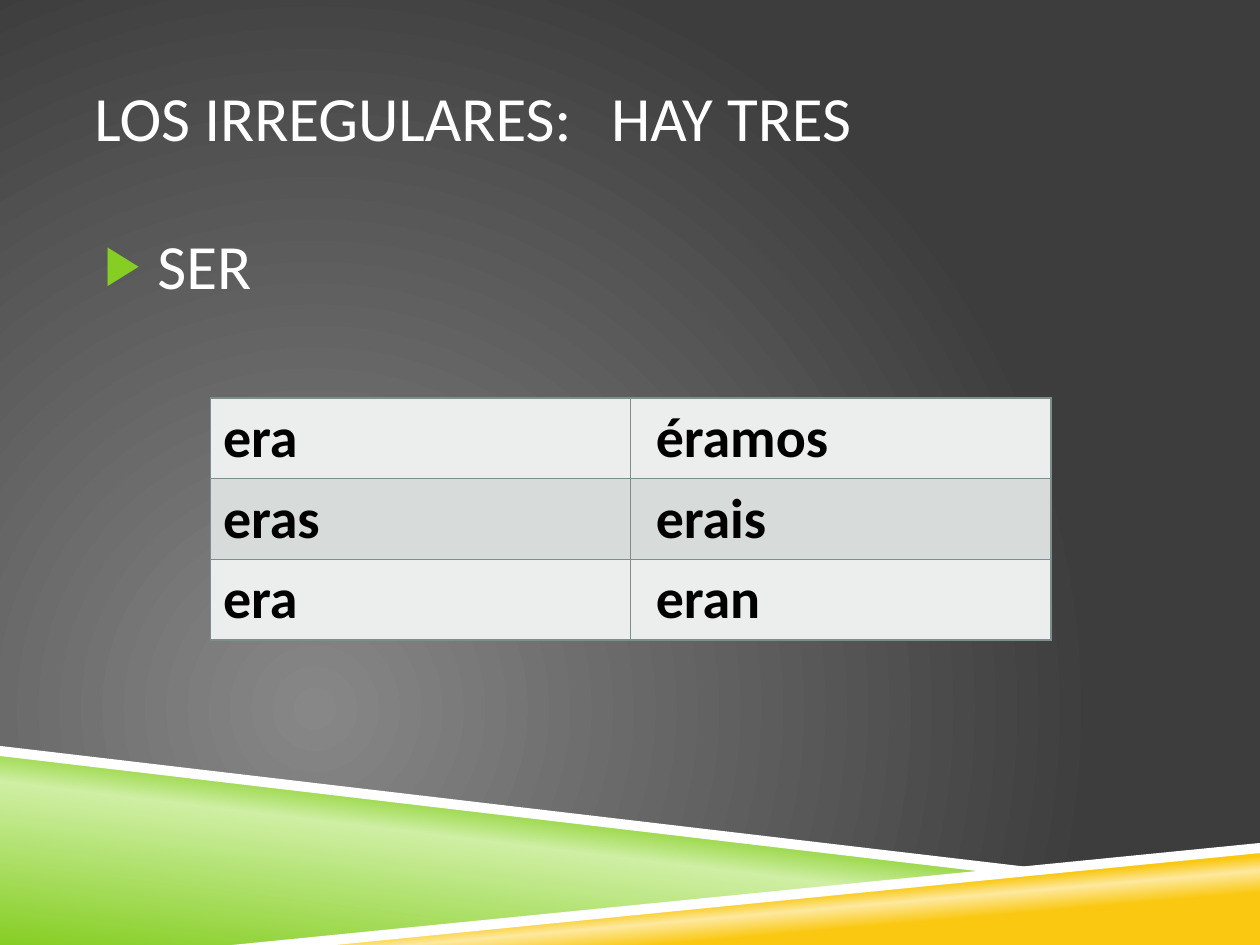
from lxml.etree import SubElement
from pptx import Presentation
from pptx.dml.color import RGBColor
from pptx.enum.text import MSO_ANCHOR
from pptx.oxml import parse_xml
from pptx.oxml.ns import nsdecls, qn
from pptx.util import Inches, Pt

WHITE = RGBColor(0xFF, 0xFF, 0xFF)
BLACK = RGBColor(0x00, 0x00, 0x00)
GREEN = RGBColor(0x86, 0xCE, 0x24)
PALE_GREEN = RGBColor(0xCF, 0xEF, 0xA4)
YELLOW = RGBColor(0xFA, 0xC8, 0x10)
PALE_YELLOW = RGBColor(0xFD, 0xE9, 0x9F)
MID_GREY = RGBColor(0x87, 0x87, 0x87)
DARK_GREY = RGBColor(0x3D, 0x3D, 0x3D)
BORDER = RGBColor(0x7D, 0x8F, 0x8C)
ROW_FILLS = [RGBColor(0xEC, 0xEE, 0xEE), RGBColor(0xD7, 0xDB, 0xDA)]
FONT = "Calibri"

FORMS = [("era", "éramos"), ("eras", "erais"), ("era", "eran")]


def gradient_xml(stops, direction):
    marks = "".join(
        f'<a:gs pos="{position * 1000}"><a:srgbClr val="{color}"/></a:gs>'
        for position, color in stops
    )
    return (
        f'<a:gradFill {nsdecls("a")} rotWithShape="1">'
        f"<a:gsLst>{marks}</a:gsLst>{direction}</a:gradFill>"
    )


def set_background(page):
    direction = (
        '<a:path path="circle"><a:fillToRect l="50000" t="100000" '
        'r="100000" b="50000"/></a:path>'
    )
    fill = gradient_xml([(0, MID_GREY), (100, DARK_GREY)], direction)
    background = parse_xml(
        f'<p:bg {nsdecls("p", "a")}><p:bgPr>{fill}<a:effectLst/></p:bgPr></p:bg>'
    )
    page.element.cSld.insert(0, background)


def add_polygon(page, points):
    corners = [(Inches(x), Inches(y)) for x, y in points]
    builder = page.shapes.build_freeform(*corners[0])
    builder.add_line_segments(corners[1:], close=True)
    shape = builder.convert_to_shape()
    shape.shadow.inherit = False
    shape.line.fill.background()
    return shape


def add_gradient_polygon(page, points, stops, angle):
    shape = add_polygon(page, points)
    direction = f'<a:lin ang="{angle * 60000}" scaled="0"/>'
    geometry = shape.element.spPr.find(qn("a:custGeom"))
    geometry.addnext(parse_xml(gradient_xml(stops, direction)))


def add_ribbons(page, width, height):
    add_gradient_polygon(
        page,
        [(0, 5.97), (7.92, 6.92), (2, height), (0, height)],
        [(0, GREEN), (52, PALE_GREEN), (66, GREEN)],
        277,
    )
    add_gradient_polygon(
        page,
        [(1.98, height), (width, 6.72), (width, height)],
        [(28, YELLOW), (40, PALE_YELLOW), (48, YELLOW)],
        265,
    )
    stripes = [
        [(0, 5.92), (0, 6), (7.9, 6.93), (8.32, 6.9)],
        [(width, 6.69), (1.84, height), (2.66, height), (width, 6.77)],
    ]
    for points in stripes:
        stripe = add_polygon(page, points)
        stripe.fill.solid()
        stripe.fill.fore_color.rgb = WHITE


def set_font(para, size, color, bold=False):
    para.font.name = FONT
    para.font.size = Pt(size)
    para.font.color.rgb = color
    para.font.bold = bold


def add_text(page, left, top, width, height, text, anchor):
    box = page.shapes.add_textbox(
        Inches(left), Inches(top), Inches(width), Inches(height)
    )
    frame = box.text_frame
    frame.word_wrap = True
    frame.vertical_anchor = anchor
    frame.margin_left = frame.margin_right = 0
    para = frame.paragraphs[0]
    para.text = text
    return para


def add_title(page, left, top, width, height):
    para = add_text(
        page, left, top, width, height,
        "LOS IRREGULARES:\tHAY TRES", MSO_ANCHOR.MIDDLE,
    )
    tabs = SubElement(para._p.get_or_add_pPr(), qn("a:tabLst"))
    SubElement(tabs, qn("a:tab"), pos=str(Inches(4.1)), algn="l")
    set_font(para, 36, WHITE)


def add_bullet(page, left, top, width, height):
    para = add_text(page, left, top, width, height, "SER", MSO_ANCHOR.TOP)
    properties = para._p.get_or_add_pPr()
    properties.set("marL", str(Inches(0.5)))
    properties.set("indent", str(Inches(-0.42)))
    color = SubElement(properties, qn("a:buClr"))
    SubElement(color, qn("a:srgbClr"), val=str(GREEN))
    SubElement(properties, qn("a:buSzPct"), val="85000")
    SubElement(properties, qn("a:buFont"), typeface=FONT)
    SubElement(properties, qn("a:buChar"), char="▶")
    set_font(para, 36, WHITE)


def set_borders(cell):
    properties = cell._tc.get_or_add_tcPr()
    for position, side in enumerate(("lnL", "lnR", "lnT", "lnB")):
        border = parse_xml(
            f'<a:{side} {nsdecls("a")} w="{Pt(1)}"><a:solidFill>'
            f'<a:srgbClr val="{BORDER}"/></a:solidFill></a:{side}>'
        )
        properties.insert(position, border)


def add_forms_table(page, left, top, width, height):
    table = page.shapes.add_table(
        len(FORMS), 2, Inches(left), Inches(top), Inches(width), Inches(height)
    ).table
    table.first_row = False
    table.horz_banding = False
    for row, forms in enumerate(FORMS):
        for column, form in enumerate(forms):
            cell = table.cell(row, column)
            cell.margin_left = Inches((0.1, 0.2)[column])
            cell.fill.solid()
            cell.fill.fore_color.rgb = ROW_FILLS[row % 2]
            set_borders(cell)
            para = cell.text_frame.paragraphs[0]
            para.text = form
            set_font(para, 32, BLACK, bold=True)


def main():
    width, height = 10, 7.5
    deck = Presentation()
    deck.slide_width = Inches(width)
    deck.slide_height = Inches(height)
    page = deck.slides.add_slide(deck.slide_layouts[6])
    set_background(page)
    add_ribbons(page, width, height)
    add_title(page, 0.75, 0.3, 8.5, 1.25)
    add_bullet(page, 0.75, 1.75, 8.5, 4.08)
    add_forms_table(page, 1.67, 3.16, 6.67, 1.92)
    deck.save("out.pptx")


if __name__ == "__main__":
    main()
